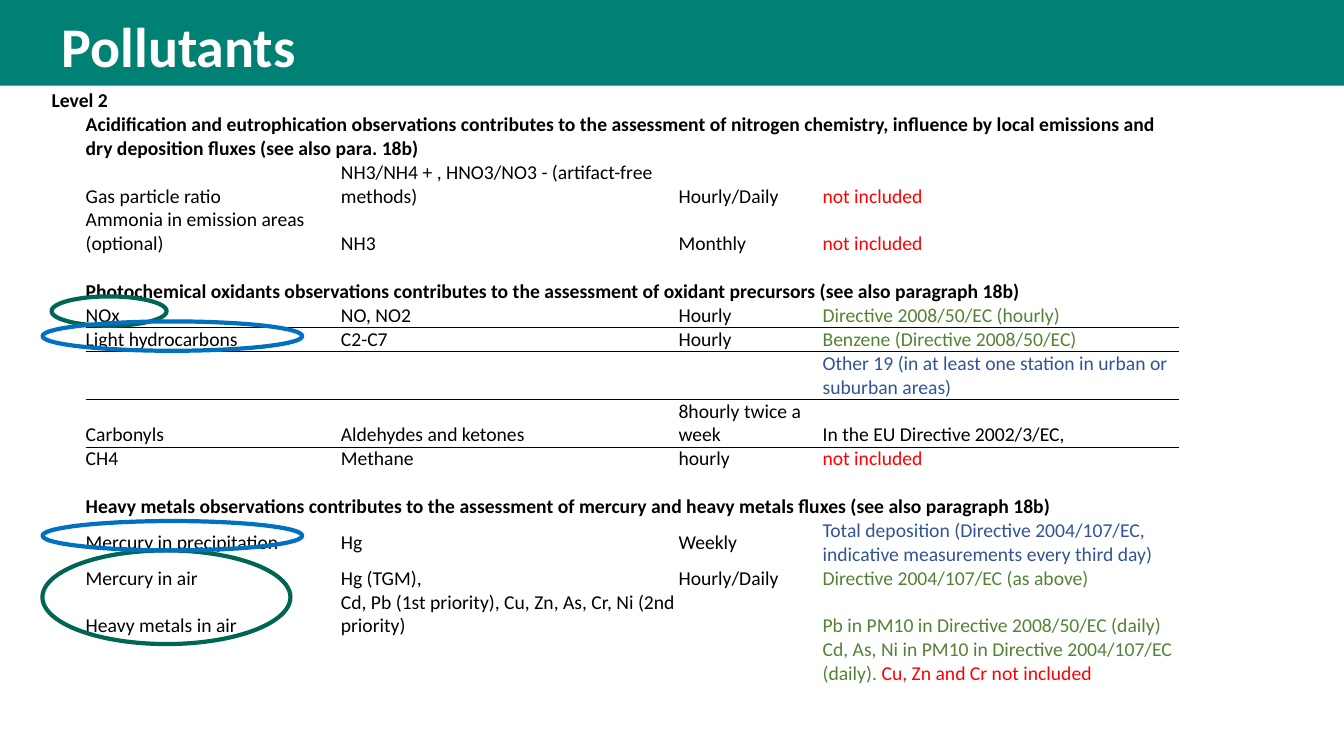
from dataclasses import dataclass
from lxml.etree import SubElement
from pptx import Presentation
from pptx.dml.color import RGBColor as Rgb
from pptx.enum.shapes import MSO_SHAPE as Shape
from pptx.enum.text import MSO_ANCHOR as Anchor, MSO_AUTO_SIZE as Fit, PP_ALIGN as Align
from pptx.oxml import parse_xml
from pptx.oxml.ns import nsdecls, qn
from pptx.util import Cm, Pt


@dataclass(frozen=True)
class Theme:
    font: str = "Calibri"
    head: int = 40
    body: int = 14
    band: str = "008173"
    white: str = "FFFFFF"
    black: str = "000000"
    red: str = "FF0000"
    green: str = "548235"
    blue: str = "305496"
    pine: str = "006654"
    azure: str = "0070C0"


LOOK = Theme()
NONE = ("not included", LOOK.red)
WIDTHS = [0.86, 6.43, 8.51, 3.63, 8.99]
LINE = 0.56
TALL = {1: 1.12, 2: 1.12, 3: 1.12, 8: 1.12, 9: 1.12, 13: 1.12, 15: 0.69, 16: 1.12}
RULED = (6, 8)
MID_ROW = 13
ROWS = [
    "Level 2",
    "Acidification and eutrophication observations contributes to the assessment of "
    "nitrogen chemistry, influence by local emissions and dry deposition fluxes "
    "(see also para. 18b)",
    ("Gas particle ratio", "NH3/NH4 + , HNO3/NO3 - (artifact-free methods)",
     "Hourly/Daily", [NONE]),
    ("Ammonia in emission areas (optional)", "NH3", "Monthly", [NONE]),
    ("", "", "", ""),
    "Photochemical oxidants observations contributes to the assessment of oxidant "
    "precursors (see also paragraph 18b)",
    ("NOx", "NO, NO2", "Hourly", [("Directive 2008/50/EC (hourly)", LOOK.green)]),
    ("Light hydrocarbons", "C2-C7", "Hourly",
     [("Benzene (Directive 2008/50/EC)", LOOK.green)]),
    ("", "", "",
     [("Other 19 (in at least one station in urban or suburban areas)", LOOK.blue)]),
    ("Carbonyls", "Aldehydes and ketones", "8hourly twice a week",
     "In the EU Directive 2002/3/EC,"),
    ("CH4", "Methane", "hourly", [NONE]),
    ("", "", "", ""),
    "Heavy metals observations contributes to the assessment of mercury and heavy "
    "metals fluxes (see also paragraph 18b)",
    ("Mercury in precipitation", "Hg", "Weekly",
     [("Total deposition (Directive 2004/107/EC, indicative measurements "
       "every third day)", LOOK.blue)]),
    ("Mercury in air", "Hg (TGM),", "Hourly/Daily",
     [("Directive 2004/107/EC (as above)", LOOK.green)]),
    ("Heavy metals in air", "Cd, Pb (1st priority), Cu, Zn, As, Cr, Ni (2nd priority)",
     "", [("Pb in PM10 in Directive 2008/50/EC (daily)", LOOK.green)]),
    ("", "", "",
     [("Cd, As, Ni in PM10 in Directive 2004/107/EC (daily). ", LOOK.green),
      ("Cu, Zn and Cr not included", LOOK.red)]),
]
RINGS = [
    (1.07, 13.87, 6.25, 2.36, LOOK.pine),
    (1.3, 7.47, 2.9, 0.74, LOOK.pine),
    (1.07, 13.13, 6.55, 0.74, LOOK.azure),
    (1.07, 8.1, 6.55, 0.74, LOOK.azure),
]


def style(font, size, tone, bold=False):
    font.name = LOOK.font
    font.size = Pt(size)
    font.bold = bold
    font.color.rgb = Rgb.from_string(tone)


def add_band(slide, width):
    band = slide.shapes.add_shape(Shape.RECTANGLE, 0, 0, width, Cm(2.16))
    band.shadow.inherit = False
    band.fill.solid()
    band.fill.fore_color.rgb = Rgb.from_string(LOOK.band)
    band.line.fill.background()
    slide.shapes._spTree.insert(2, band._element)


def set_title(slide, text):
    title = slide.shapes.title
    title.left, title.top = Cm(1.3), Cm(0.1)
    title.width, title.height = Cm(31.24), Cm(1.88)
    frame = title.text_frame
    frame.text = text
    frame.auto_size = Fit.NONE
    frame.vertical_anchor = Anchor.TOP
    frame.margin_top, frame.margin_bottom = Cm(0.2), 0
    para = frame.paragraphs[0]
    para.alignment = Align.LEFT
    style(para.font, LOOK.head, LOOK.white, True)


def fill_cell(cell, text, bold=False):
    para = cell.text_frame.paragraphs[0]
    if not text:
        SubElement(para._p, qn("a:endParaRPr"), sz=str(LOOK.body * 100))
        return
    parts = [(text, LOOK.black)] if isinstance(text, str) else text
    for words, tone in parts:
        run = para.add_run()
        run.text = words
        if len(parts) > 1:
            style(run.font, LOOK.body, tone)
    if len(parts) == 1:
        style(para.font, LOOK.body, parts[0][1], bold)


def rule(cell, side):
    edge = parse_xml(
        f'<a:{side} {nsdecls("a")} w="6350"><a:solidFill>'
        f'<a:srgbClr val="{LOOK.black}"/></a:solidFill></a:{side}>')
    cell._tc.get_or_add_tcPr().insert(0, edge)


def clear(cell, anchor):
    cell.margin_left = cell.margin_right = cell.margin_top = cell.margin_bottom = 0
    cell.vertical_anchor = anchor
    cell.fill.background()


def add_grid(slide):
    frame = slide.shapes.add_table(
        len(ROWS), len(WIDTHS), Cm(1.3), Cm(2.24), Cm(sum(WIDTHS)), Cm(14.8))
    grid = frame.table
    grid.first_row = grid.horz_banding = False
    grid._tbl.tblPr.find(qn("a:tableStyleId")).text = "{2D5ABB26-0587-4C30-8999-92F81FD0307C}"
    for col, width in zip(grid.columns, WIDTHS):
        col.width = Cm(width)
    for i, row in enumerate(ROWS):
        grid.rows[i].height = Cm(TALL.get(i, LINE))
        head = isinstance(row, str)
        if i == 0:
            texts = [row, "", "", "", ""]
            grid.cell(0, 0).merge(grid.cell(0, 1))
        elif head:
            texts = ["", row, "", "", ""]
            grid.cell(i, 1).merge(grid.cell(i, 4))
        else:
            texts = ["", *row]
        for j, text in enumerate(texts):
            cell = grid.cell(i, j)
            clear(cell, Anchor.MIDDLE if i == MID_ROW else Anchor.BOTTOM)
            fill_cell(cell, text, head)
            if j and i in RULED:
                rule(cell, "lnB")
            if j and i - 1 in RULED:
                rule(cell, "lnT")


def add_ring(slide, left, top, width, height, tone):
    ring = slide.shapes.add_shape(Shape.OVAL, Cm(left), Cm(top), Cm(width), Cm(height))
    ring.shadow.inherit = False
    ring.fill.background()
    ring.line.color.rgb = Rgb.from_string(tone)
    ring.line.width = Pt(3)


def main():
    deck = Presentation()
    deck.slide_width, deck.slide_height = Cm(33.87), Cm(19.05)
    slide = deck.slides.add_slide(deck.slide_layouts[5])
    add_band(slide, deck.slide_width)
    set_title(slide, "Pollutants")
    add_grid(slide)
    for ring in RINGS:
        add_ring(slide, *ring)
    deck.save("out.pptx")


if __name__ == "__main__":
    main()
